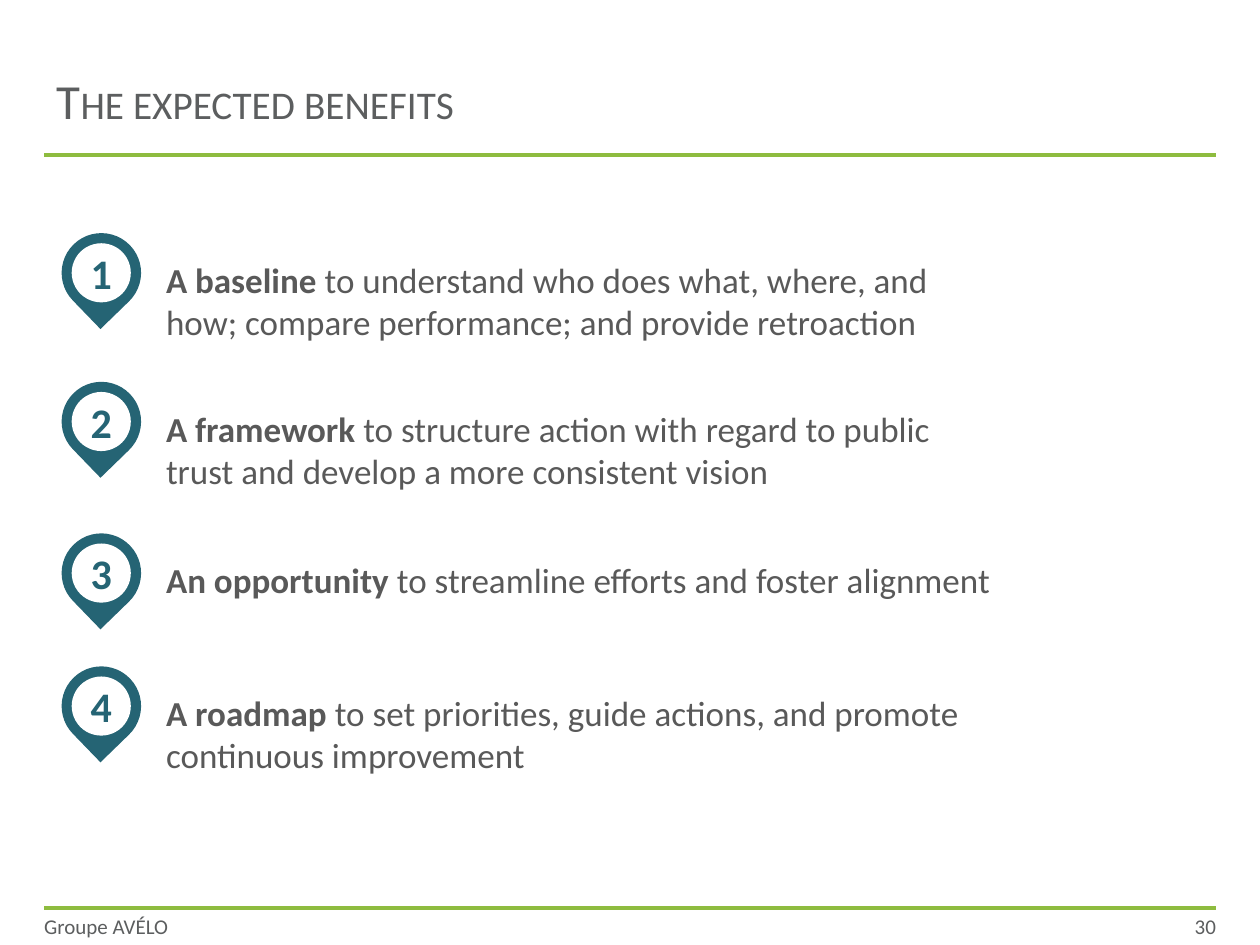
from pptx import Presentation
from pptx.dml.color import RGBColor
from pptx.enum import shapes, text
from pptx.oxml.ns import qn
from pptx.util import Pt
from lxml import etree

GREEN, TEAL, WHITE, GREY, DARK = "8EBC3F", "256474", "FFFFFF", "5C5E5F", "595959"
KIND, ALIGN, ANCHOR = shapes.MSO_SHAPE, text.PP_ALIGN, text.MSO_ANCHOR


def color(value):
    """Turn a hex string into a colour."""
    return RGBColor.from_string(value)


def style(r, size, fill, bold=False):
    """Format one run."""
    r.font.name, r.font.size, r.font.bold = "Calibri", Pt(size), bold
    r.font.color.rgb = color(fill)


def add_plain(parent, kind, x, y, w, h, fill):
    """Add a filled shape without outline or shadow."""
    sp = parent.shapes.add_shape(kind, Pt(x), Pt(y), Pt(w), Pt(h))
    sp.shadow.inherit = False
    sp.fill.solid()
    sp.fill.fore_color.rgb = color(fill)
    sp.line.fill.background()
    return sp


def add_rule(s, x, y, w):
    """Add a horizontal green rule."""
    line = s.shapes.add_connector(shapes.MSO_CONNECTOR.STRAIGHT, Pt(x), Pt(y), Pt(x + w), Pt(y))
    line.line.color.rgb = color(GREEN)
    line.line.width = Pt(2.25)
    etree.SubElement(line._element.spPr, qn("a:effectLst"))


def add_title(s, x, y, w, h, words):
    """Place the title in small capitals with the rule below it."""
    add_rule(s, x, y + 67, w)
    sp = s.shapes.title
    sp.left, sp.top, sp.width, sp.height = Pt(x), Pt(y), Pt(w), Pt(h)
    tf = sp.text_frame
    tf.text = words
    tf.vertical_anchor = ANCHOR.MIDDLE
    p = tf.paragraphs[0]
    p.alignment = ALIGN.LEFT
    style(p.runs[0], 28, GREY)
    p.runs[0].font._element.set("cap", "small")


def add_footer(s, x, y, w, h, owner, number):
    """Place the rule, the owner on the left and the page number on the right."""
    add_rule(s, x, y, w)
    half = w / 2
    for left, words, align in ((x, owner, ALIGN.LEFT), (x + half, number, ALIGN.RIGHT)):
        tf = s.shapes.add_textbox(Pt(left), Pt(y), Pt(half), Pt(h)).text_frame
        tf.margin_left = tf.margin_right = tf.margin_top = tf.margin_bottom = 0
        tf.word_wrap = True
        tf.vertical_anchor = ANCHOR.MIDDLE
        tf.text = words
        p = tf.paragraphs[0]
        p.alignment = align
        style(p.runs[0], 12, GREY)


def add_benefit(s, x, y, w, h, number, lead, rest):
    """Place one group of a numbered pin and its statement."""
    group = s.shapes.add_group_shape()
    panel = add_plain(group, KIND.RECTANGLE, x + 52.6, y + 11, w - 52.6, h, WHITE)
    clr = panel._element.spPr.find(".//" + qn("a:srgbClr"))
    etree.SubElement(clr, qn("a:alpha"), val="88000")
    tf = panel.text_frame
    tf.word_wrap = True
    tf.vertical_anchor = ANCHOR.TOP
    p = tf.paragraphs[0]
    p.alignment = ALIGN.LEFT
    p.space_after = Pt(12)
    for words, bold in ((lead + " ", True), (rest, False)):
        r = p.add_run()
        r.text = words
        style(r, 20, DARK, bold)

    add_plain(group, KIND.TEAR, x, y, 45.4, 45.4, TEAL).rotation = 135.9
    tf = add_plain(group, KIND.OVAL, x + 5.8, y + 5.8, 33.8, 33.8, WHITE).text_frame
    tf.word_wrap = False
    tf.vertical_anchor = ANCHOR.MIDDLE
    tf.text = number
    p = tf.paragraphs[0]
    p.alignment = ALIGN.CENTER
    style(p.runs[0], 24, TEAL, True)


def main():
    """Build and save the slide."""
    prs = Presentation()
    prs.slide_width, prs.slide_height = Pt(720), Pt(540)
    s = prs.slides.add_slide(prs.slide_layouts[5])
    add_title(s, 25.2, 21.6, 669.6, 70.6, "The expected benefits")
    add_footer(s, 25.2, 519.1, 669.6, 20.2, "Groupe AVÉLO", "30")
    benefits = (
        (133.2, 62, "A baseline", "to understand who does what, where, and how; "
         "compare performance; and provide retroaction"),
        (218.2, 63, "A framework", "to structure action with regard to public trust "
         "and develop a more consistent vision"),
        (304.8, 42, "An opportunity", "to streamline efforts and foster alignment"),
        (380.8, 60, "A roadmap", "to set priorities, guide actions, and promote "
         "continuous improvement"),
    )
    for number, (y, h, lead, rest) in enumerate(benefits, 1):
        add_benefit(s, 35.2, y, 545.8, h, str(number), lead, rest)
    prs.save("out.pptx")


if __name__ == "__main__":
    main()
